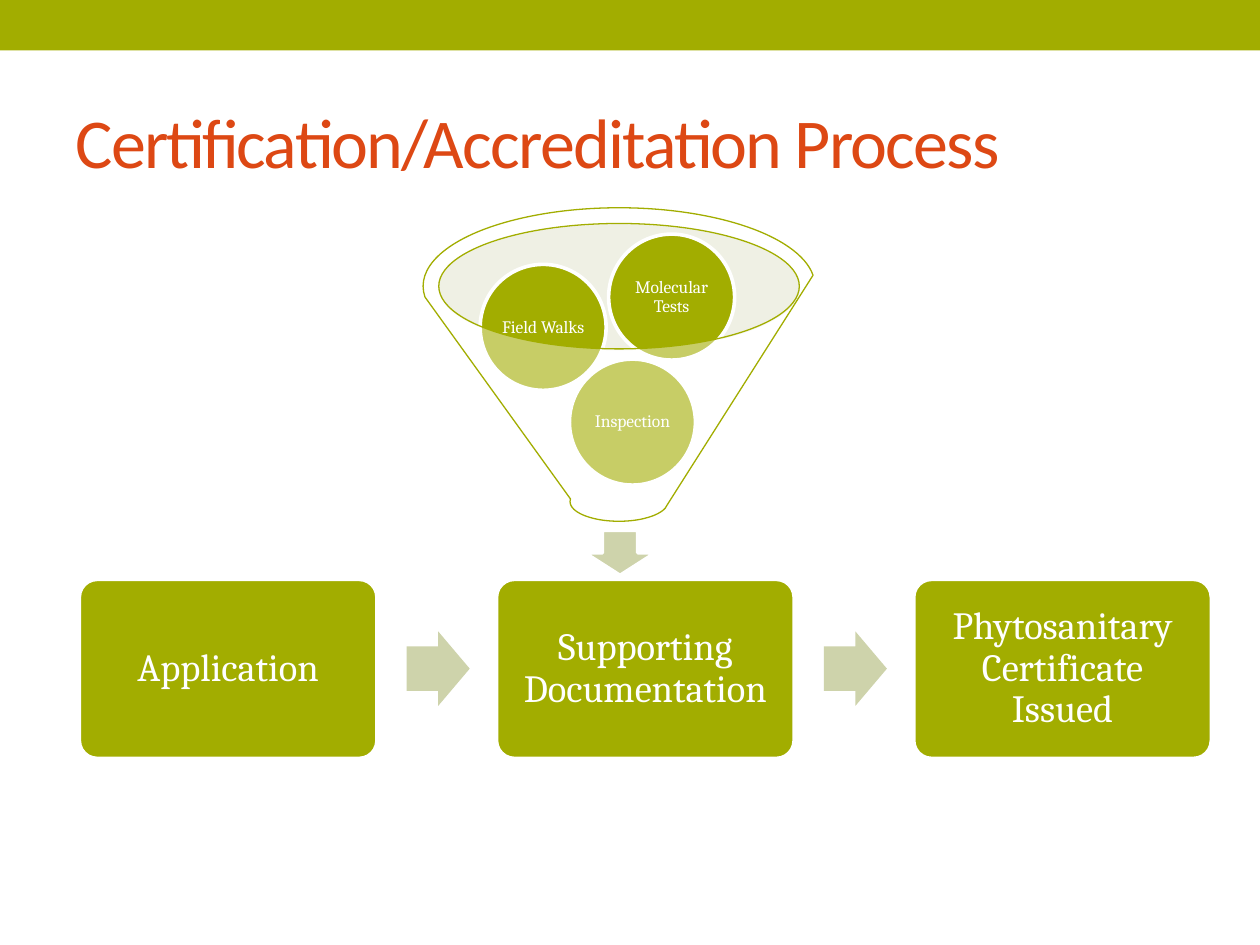
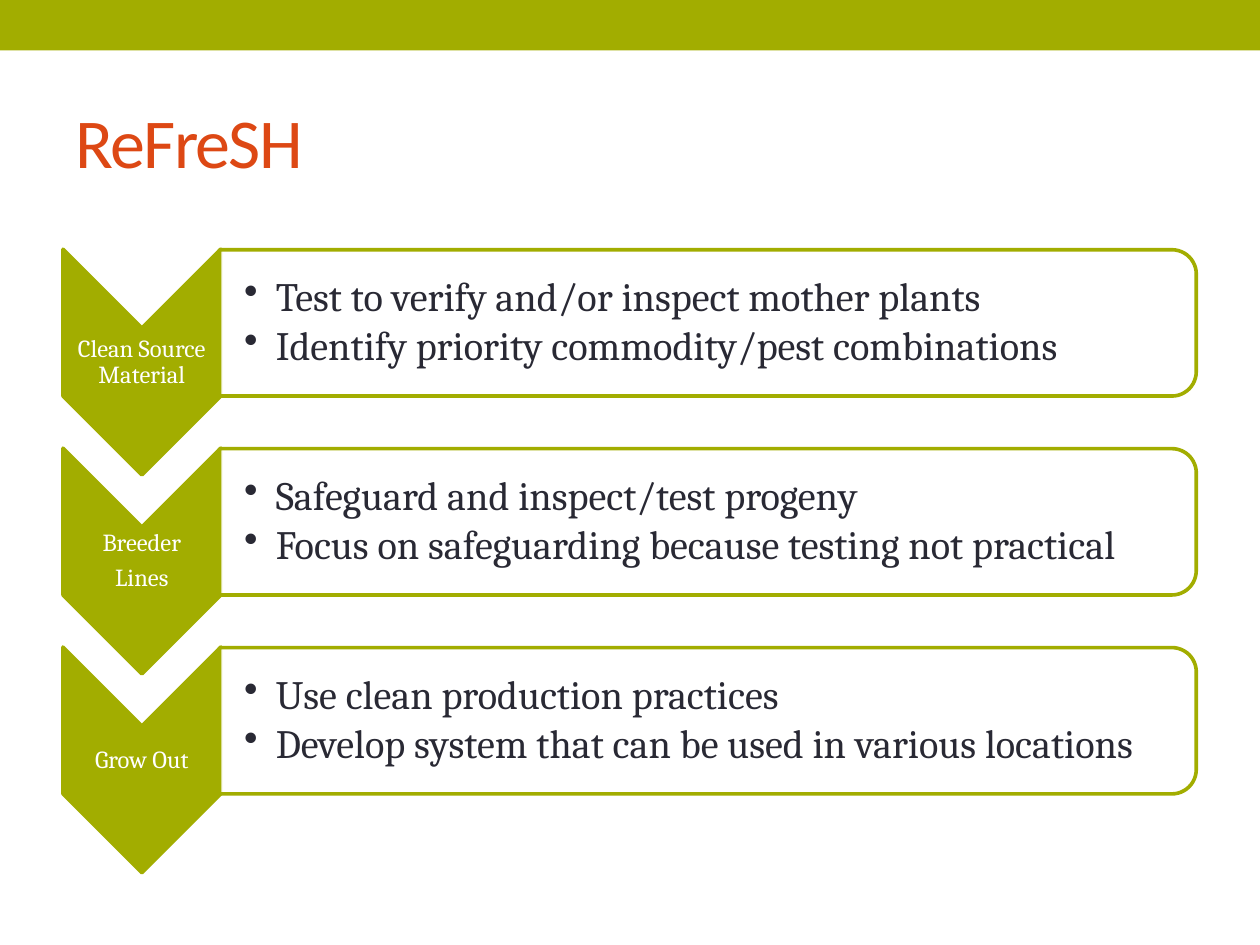
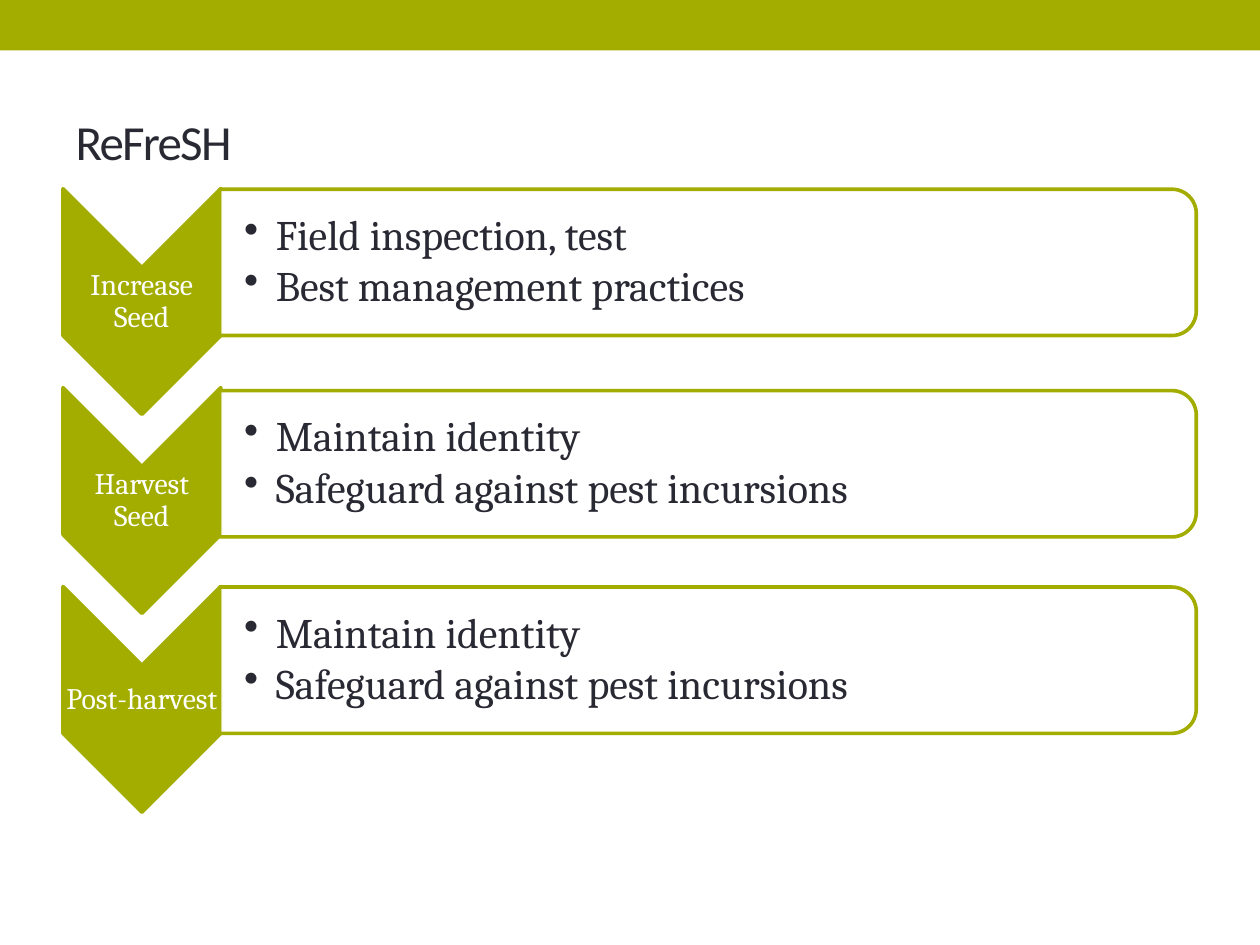
from lxml import etree
from pptx import Presentation
from pptx import util as u
from pptx.dml.color import RGBColor
from pptx.enum import shapes, text
from pptx.oxml import ns

# Shared style
LIME, SAGE, PALE = "A2AD00", "CED3AB", "D7DBBD"
WHITE, INK, ORANGE = "FFFFFF", "292934", "DD4814"
HEADING, BODY = "Calibri", "Cambria"
BORDER = 2.08
rgb = RGBColor.from_string
Kind = shapes.MSO_SHAPE


def draw(slide, kind, box, fill, line=None, width=BORDER, alpha=None):
    """Add a preset shape; box is left, top, width, height in cm."""
    shape = slide.shapes.add_shape(kind, *map(u.Cm, box))
    shape.shadow.inherit = False
    shape.fill.solid()
    shape.fill.fore_color.rgb = rgb(fill)
    if alpha:
        tint = shape.element.spPr.find(ns.qn("a:solidFill"))[0]
        etree.SubElement(tint, ns.qn("a:alpha"), val=str(alpha * 1000))
    if line:
        shape.line.color.rgb = rgb(line)
        shape.line.width = u.Pt(width)
    else:
        shape.line.fill.background()
    return shape


def write(frame, lines, size, color=WHITE, inset=0.03, left=None, bullets=False):
    """Fill a text frame, one paragraph a line; insets are in cm."""
    frame.word_wrap = True
    frame.vertical_anchor = text.MSO_ANCHOR.MIDDLE
    frame.margin_top = frame.margin_right = frame.margin_bottom = u.Cm(inset)
    frame.margin_left = u.Cm(left or inset)
    for number, line in enumerate(lines):
        paragraph = frame.add_paragraph() if number else frame.paragraphs[0]
        paragraph.line_spacing = 0.9
        paragraph.space_after = u.Pt(size * (0.15 if bullets else 0.35))
        paragraph.alignment = text.PP_ALIGN.LEFT if bullets else text.PP_ALIGN.CENTER
        if bullets:
            properties = paragraph._p.get_or_add_pPr()
            properties.set("marL", str(u.Cm(0.64)))
            properties.set("indent", str(-u.Cm(0.64)))
            etree.SubElement(properties, ns.qn("a:buChar"), char="•")
        run = paragraph.add_run()
        run.text = line
        run.font.name, run.font.size = BODY, u.Pt(size)
        run.font.color.rgb = rgb(color)


prs = Presentation()
prs.slide_width, prs.slide_height = u.Cm(25.4), u.Cm(19.05)

# Title position, shared through the layout
layout = prs.slide_layouts.get_by_name("Title Only")
heading = layout.placeholders[0]
heading.left, heading.top = u.Cm(1.27), u.Cm(1.47)
heading.width, heading.height = u.Cm(22.86), u.Cm(2.74)

# Slides with their titles
titles = [
    ("Certification/Accreditation Process", 40, ORANGE),
    ("ReFreSH", 40, ORANGE),
    ("ReFreSH", 28, INK),
]
for title, size, color in titles:
    slide = prs.slides.add_slide(layout)
    frame = slide.shapes.title.text_frame
    frame.vertical_anchor = text.MSO_ANCHOR.MIDDLE
    frame.paragraphs[0].alignment = text.PP_ALIGN.LEFT
    run = frame.paragraphs[0].add_run()
    run.text = title
    run.font.name, run.font.size = HEADING, u.Pt(size)
    run.font.color.rgb = rgb(color)
    run.font._element.set("spc", "-100")

process, source_steps, seed_steps = prs.slides

# Top band, moved to the master behind everything else
band = draw(process, Kind.RECTANGLE, (0, 0, 25.4, 1.02), LIME)
prs.slide_master.shapes.element.insert(2, band.element)

# Slide 1: funnel of evidence
draw(process, Kind.OVAL, (8.84, 4.52, 7.29, 2.54), PALE, alpha=40)
draw(process, Kind.DOWN_ARROW, (11.79, 10.69, 1.42, 0.91), SAGE, WHITE)
evidence = [
    ("Inspection", 11.48, 7.24),
    ("Field Walks", 9.68, 5.33),
    ("Molecular Tests", 12.27, 4.72),
]
for check, left, top in evidence:
    ball = draw(process, Kind.OVAL, (left, top, 2.54, 2.54), LIME, WHITE)
    write(ball.text_frame, [check], 10)
draw(process, Kind.FUNNEL, (8.53, 4.19, 7.9, 6.32), WHITE, LIME, 0.75, alpha=40)

# Slide 1: stages and the arrows between them
stages = ["Application", "Supporting Documentation", "Phytosanitary Certificate Issued"]
STAGE_PITCH = 8.41
for column, stage in enumerate(stages):
    shift = column * STAGE_PITCH
    card = draw(process, Kind.ROUNDED_RECTANGLE, (1.6 + shift, 11.68, 6, 3.61), LIME, WHITE)
    card.adjustments[0] = 0.1
    write(card.text_frame, [stage], 22, inset=0.23)
    if column < len(stages) - 1:
        arrow = draw(process, Kind.RIGHT_ARROW, (8.2 + shift, 12.73, 1.27, 1.5), SAGE)
        arrow.adjustments[0] = 0.6

# Slides 2 and 3: chevron lists
# Each step: label lines, bullets, downward shift of its panel
clean_source = [
    (["Clean Source Material"],
     ["Test to verify and/or inspect mother plants",
      "Identify priority commodity/pest combinations"], 0),
    (["Breeder", "Lines"],
     ["Safeguard and inspect/test progeny",
      "Focus on safeguarding because testing not practical"], 0),
    (["Grow Out"],
     ["Use clean production practices",
      "Develop system that can be used in various locations"], 0),
]
safeguards = ["Maintain identity", "Safeguard against pest incursions"]
seed = [
    (["Increase Seed"], ["Field inspection, test", "Best management practices"], 0),
    (["Harvest Seed"], safeguards, 0.05),
    (["Post-harvest"], safeguards, 0),
]
STEP_PITCH = 4.01
CHEVRON_X, CHEVRON_LENGTH, CHEVRON_WIDTH = 2.86, 4.55, 3.18
PANEL_X, PANEL_LENGTH, PANEL_HEIGHT = 14.27, 19.69, 2.95
step_lists = [
    (source_steps, clean_source, 7.3, 14, 23),
    (seed_steps, seed, 6.08, 17, 24),
]
for slide, steps, first, label_size, bullet_size in step_lists:
    for row, (label, points, shift) in enumerate(steps):
        middle = first + row * STEP_PITCH
        chevron = draw(slide, Kind.CHEVRON,
                       (CHEVRON_X - CHEVRON_LENGTH / 2, middle - CHEVRON_WIDTH / 2,
                        CHEVRON_LENGTH, CHEVRON_WIDTH), LIME, LIME)
        chevron.rotation = 90
        caption = slide.shapes.add_textbox(
            u.Cm(CHEVRON_X - CHEVRON_WIDTH / 2), u.Cm(middle - 0.68),
            u.Cm(CHEVRON_WIDTH), u.Cm(1.37))
        write(caption.text_frame, label, label_size)

        panel_middle = middle - 0.79 + shift
        panel = draw(slide, Kind.ROUND_2_SAME_RECTANGLE,
                     (PANEL_X - PANEL_HEIGHT / 2, panel_middle - PANEL_LENGTH / 2,
                      PANEL_HEIGHT, PANEL_LENGTH), WHITE, LIME, alpha=90)
        panel.rotation = 90
        details = slide.shapes.add_textbox(
            u.Cm(4.45), u.Cm(panel_middle - 1.33), u.Cm(19.53), u.Cm(2.66))
        write(details.text_frame, points, bullet_size, INK, 0.05, 0.47, bullets=True)

prs.save("out.pptx")
